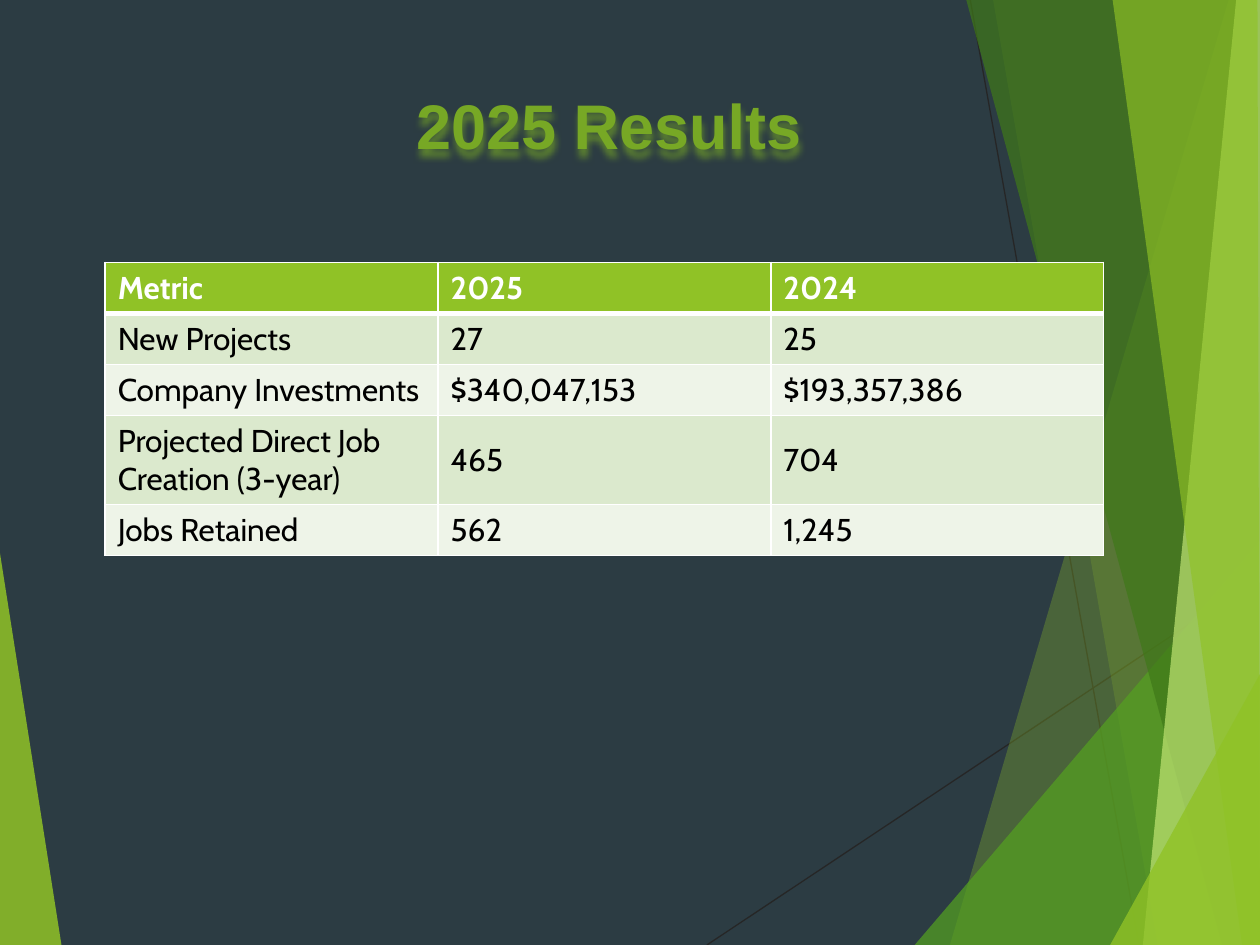
from lxml import etree
from pptx import Presentation
from pptx import util as u
from pptx.dml.color import RGBColor
from pptx.enum import shapes, text
from pptx.oxml.ns import qn

NIGHT = RGBColor(0x2C, 0x3C, 0x43)
LIME = RGBColor(0x90, 0xC2, 0x26)
GREEN = RGBColor(0x54, 0xA0, 0x21)
FOREST = RGBColor(0x3F, 0x78, 0x19)
PALE_LIME = RGBColor(0xC0, 0xE4, 0x74)
TITLE_GREEN = RGBColor(0x77, 0xA8, 0x25)
CHARCOAL = RGBColor(0x26, 0x26, 0x26)
WHITE = RGBColor(0xFF, 0xFF, 0xFF)
BLACK = RGBColor(0, 0, 0)
BANDS = (RGBColor(0xDB, 0xE9, 0xCD), RGBColor(0xEE, 0xF4, 0xE8))

WIDTH, HEIGHT = 25.4, 19.05  # cm

RAYS = [
    ((14.25, HEIGHT), (WIDTH, 11.63)),
    ((19.56, 0), (22.96, HEIGHT)),
]
CORNER = (WIDTH, HEIGHT)
TOP_RIGHT = (WIDTH, 0)
FACETS = [  # colour, opacity in percent, corners in cm
    (LIME, 85, [(0, 11.15), (1.24, HEIGHT), (0, HEIGHT)]),
    (LIME, 30, [(24.77, 0), (19.15, HEIGHT), CORNER, TOP_RIGHT]),
    (LIME, 20, [(20.02, 0), (23.34, HEIGHT), CORNER, TOP_RIGHT]),
    (GREEN, 72, [(18.44, HEIGHT), (WIDTH, 10.9), CORNER]),
    (FOREST, 70, [(19.48, 0), (24.64, HEIGHT), CORNER, TOP_RIGHT]),
    (PALE_LIME, 70, [(24.92, 0), (23.04, HEIGHT), CORNER, TOP_RIGHT]),
    (LIME, 65, [(22.43, 0), (25.04, HEIGHT), CORNER, (25.35, 0)]),
    (LIME, 80, [(22.38, HEIGHT), (WIDTH, 13.59), CORNER]),
]
RESULTS = [
    ("Metric", "2025", "2024"),
    ("New Projects", "27", "25"),
    ("Company Investments", "$340,047,153", "$193,357,386"),
    ("Projected Direct Job Creation (3-year)", "465", "704"),
    ("Jobs Retained", "562", "1,245"),
]
ROW_HEIGHTS = (1.03, 1.03, 1.03, 1.79, 1.03)


def write(frame, words, font="Cabin", size=18, color=BLACK, bold=False, align=None):
    paragraph = frame.paragraphs[0]
    paragraph.alignment = align
    run = paragraph.add_run()
    run.text = words
    run.font.name = font
    run.font.size = u.Pt(size)
    run.font.bold = bold
    run.font.color.rgb = color


def set_opacity(parent, percent):
    """Make the first colour found below parent partly transparent."""
    color = parent.find(".//" + qn("a:srgbClr"))
    etree.SubElement(color, qn("a:alpha"), val=str(percent * 1000))


def border_cell(cell, top, bottom):
    """Draw white borders; top and bottom are widths in points."""
    properties = cell._tc.get_or_add_tcPr()
    sides = (("a:lnL", 1), ("a:lnR", 1), ("a:lnT", top), ("a:lnB", bottom))
    for position, (side, width) in enumerate(sides):
        border = etree.Element(qn(side), w=str(u.Pt(width)))
        fill = etree.SubElement(border, qn("a:solidFill"))
        etree.SubElement(fill, qn("a:srgbClr"), val=str(WHITE))
        properties.insert(position, border)


class ResultsSlide:
    """Holds the current slide and draws its kinds of element."""

    def __init__(self, deck):
        self.slide = deck.slides.add_slide(deck.slide_layouts[5])
        background = self.slide.background.fill
        background.solid()
        background.fore_color.rgb = NIGHT

    def ray(self, start, end):
        ends = [u.Cm(length) for length in (*start, *end)]
        line = self.slide.shapes.add_connector(shapes.MSO_CONNECTOR.STRAIGHT, *ends)
        line.line.color.rgb = CHARCOAL
        line.line.width = u.Pt(0.75)
        etree.SubElement(line._element.spPr, qn("a:effectLst"))

    def facet(self, color, opacity, corners):
        first, *others = [(u.Cm(x), u.Cm(y)) for x, y in corners]
        builder = self.slide.shapes.build_freeform(*first)
        builder.add_line_segments(others, close=True)
        facet = builder.convert_to_shape()
        facet.shadow.inherit = False
        facet.fill.solid()
        facet.fill.fore_color.rgb = color
        facet.line.fill.background()
        set_opacity(facet._element.spPr, opacity)

    def title(self, words):
        title = self.slide.shapes.title
        title.left, title.top = u.Cm(-0.43), u.Cm(1.6)
        title.width, title.height = u.Cm(WIDTH), u.Cm(1.8)
        frame = title.text_frame
        frame.word_wrap = True
        frame.auto_size = text.MSO_AUTO_SIZE.SHAPE_TO_FIT_TEXT
        frame.vertical_anchor = text.MSO_ANCHOR.MIDDLE
        write(frame, words, font="Arial", size=36, color=TITLE_GREEN, bold=True,
              align=text.PP_ALIGN.CENTER)
        effects = etree.SubElement(title._element.spPr, qn("a:effectLst"))
        shadow = etree.SubElement(effects, qn("a:outerShdw"), blurRad=str(u.Pt(4)),
                                  dist=str(u.Pt(4)), dir="5400000")
        etree.SubElement(shadow, qn("a:srgbClr"), val=str(TITLE_GREEN))
        set_opacity(effects, 65)

    def table(self, rows, heights, left, top, column_width):
        columns = len(rows[0])
        table = self.slide.shapes.add_table(
            len(rows), columns, u.Cm(left), u.Cm(top),
            u.Cm(column_width * columns), u.Cm(sum(heights))).table
        for column in table.columns:
            column.width = u.Cm(column_width)
        for r, (values, height) in enumerate(zip(rows, heights)):
            table.rows[r].height = u.Cm(height)
            header = r == 0
            for c, value in enumerate(values):
                cell = table.cell(r, c)
                cell.vertical_anchor = text.MSO_ANCHOR.MIDDLE
                cell.fill.solid()
                cell.fill.fore_color.rgb = LIME if header else BANDS[(r - 1) % 2]
                write(cell.text_frame, value, color=WHITE if header else BLACK,
                      bold=header)
                border_cell(cell, top=3 if r == 1 else 1, bottom=3 if header else 1)


def main():
    deck = Presentation()
    deck.slide_width, deck.slide_height = u.Cm(WIDTH), u.Cm(HEIGHT)
    results = ResultsSlide(deck)
    for start, end in RAYS:
        results.ray(start, end)
    for color, opacity, corners in FACETS:
        results.facet(color, opacity, corners)
    results.title("2025 Results")
    results.table(RESULTS, ROW_HEIGHTS, left=2.12, top=5.29, column_width=6.71)
    deck.save("out.pptx")


if __name__ == "__main__":
    main()
